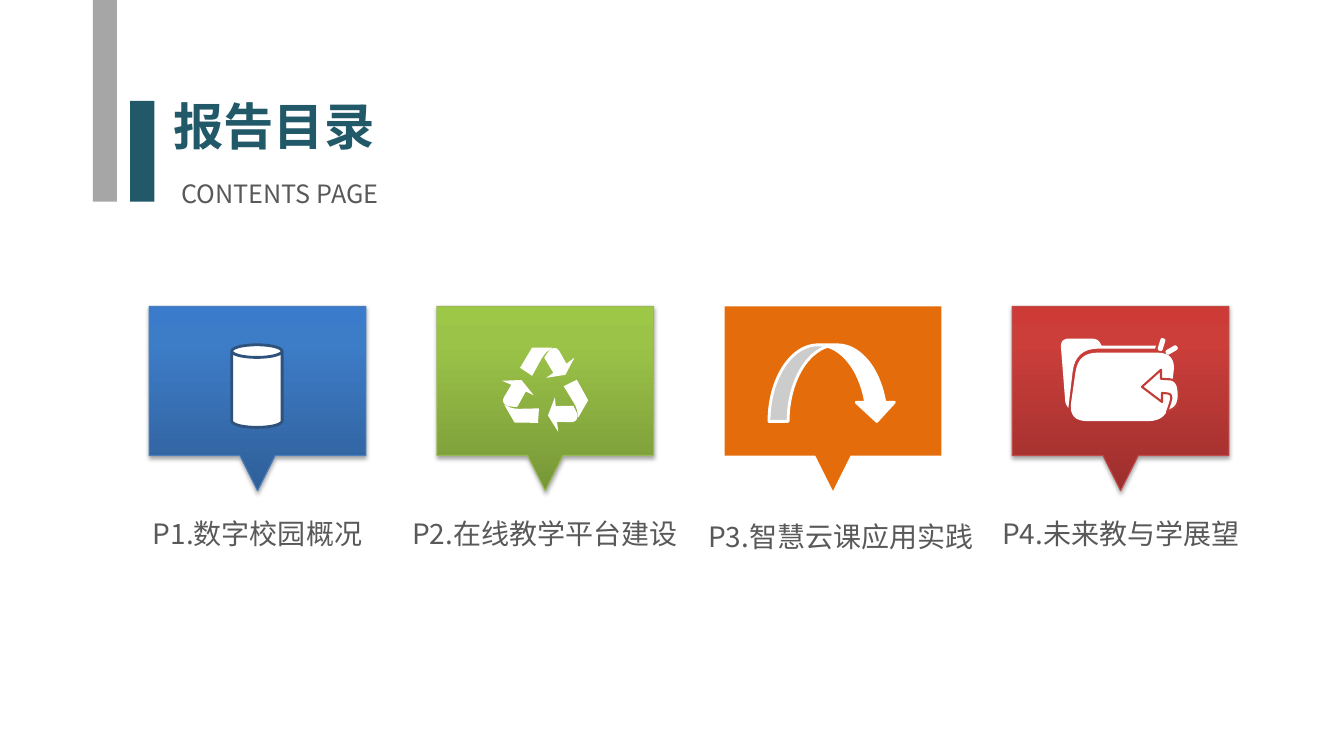
from copy import deepcopy
from dataclasses import dataclass
from math import cos, dist, radians, sin
from typing import NamedTuple, Optional

from lxml import etree
from pptx import Presentation
from pptx.dml.color import RGBColor
from pptx.enum.shapes import MSO_SHAPE
from pptx.enum.text import MSO_ANCHOR, MSO_AUTO_SIZE, PP_ALIGN
from pptx.oxml.ns import qn
from pptx.util import Cm, Pt

RECT, CAN, ARC_ARROW = MSO_SHAPE.RECTANGLE, MSO_SHAPE.CAN, MSO_SHAPE.CURVED_DOWN_ARROW
TOP, GROW, CENTER = MSO_ANCHOR.TOP, MSO_AUTO_SIZE.SHAPE_TO_FIT_TEXT, PP_ALIGN.CENTER
FONT = "Noto Sans CJK SC"
COLORS = {"gray": "A6A6A6", "teal": "215968", "text": "595959", "white": "FFFFFF",
          "orange": "E46C0A", "navy": "2F527D", "red": "C43C38"}
FINE = 10  # outlines are drawn on a grid this much finer than their units
UNIT = Cm(2.54) / 100
CURVE_STEPS = 8
CARD_LEFT, CARD_TOP, CARD_PITCH = 3.76, 7.72, 7.25


class Corner(NamedTuple):
    x: float
    y: float
    cut: float = 0  # how far from the corner its rounding starts


@dataclass
class Label:
    text: str
    box: tuple[float, float, float, float]
    size: int = 20
    color: str = "text"
    bold: bool = False
    spacing: Optional[float] = None


@dataclass
class Card:
    label: Label
    gradient: tuple[str, ...] = ()
    line: str = ""


@dataclass
class Preset:
    kind: MSO_SHAPE
    box: tuple[float, float, float, float]
    fill: str
    line: str = ""


Outline = list[Corner]
TITLE = Label("报告目录", (3.96, 2.26, 5.89, 1.8), 36, "teal", True)
SUBTITLE = Label("CONTENTS PAGE", (4.17, 4.37, 5.77, 1.02), 18)
CARDS = [
    Card(Label("P1.数字校园概况", (2.54, 12.88, 7.9, 1.12)),
         ("2F5F99", "3D7CC7", "3A7CCB"), "4B7EBC"),
    Card(Label("P2.在线教学平台建设", (10.11, 12.88, 7.24, 1.12)),
         ("779737", "9BC348", "9DC746"), "98B955"),
    Card(Label("P3.智慧云课应用实践", (16.81, 12.8, 8.76, 1.27), spacing=1.2)),
    Card(Label("P4.未来教与学展望", (24.87, 12.9, 6.76, 1.12)),
         ("9C2F2D", "CB3E3A", "CE3B37"), "BF4C48"),
]
BARS = [Preset(RECT, (2.34, 0, 0.61, 5.08), "gray"),
        Preset(RECT, (3.28, 2.54, 0.61, 2.54), "teal")]
ICONS = [Preset(CAN, (5.84, 8.69, 1.27, 2.08), "white", "navy"),
         Preset(ARC_ARROW, (19.38, 8.69, 3.2, 1.93), "white", "white")]


# Geometry
def turn(outline: Outline, angle: float, center: tuple[float, float]) -> Outline:
    """Rotate an outline clockwise about a center."""
    cx, cy = center
    c, s = cos(radians(angle)), sin(radians(angle))
    return [Corner(cx + (x - cx) * c - (y - cy) * s, cy + (x - cx) * s + (y - cy) * c, cut)
            for x, y, cut in outline]


def round_corners(outline: Outline) -> list[tuple[float, float]]:
    """Replace each rounded corner by points of a quadratic curve."""
    points = []
    for i, corner in enumerate(outline):
        here = corner[:2]
        if not corner.cut:
            points.append(here)
            continue
        ends = []
        for neighbour in (outline[i - 1], outline[(i + 1) % len(outline)]):
            share = min(0.5, corner.cut / dist(here, neighbour[:2]))
            ends.append([a + (b - a) * share for a, b in zip(here, neighbour)])
        for step in range(CURVE_STEPS + 1):
            t = step / CURVE_STEPS
            points.append(tuple((1 - t) ** 2 * a + 2 * t * (1 - t) * b + t * t * c
                                for a, b, c in zip(ends[0], here, ends[1])))
    return [(x * FINE, y * FINE) for x, y in points]


def callout(width: float = 215, height: float = 148, tail: float = 35) -> Outline:
    middle, half = width / 2, tail / 2
    return [Corner(0, 0), Corner(width, 0), Corner(width, height),
            Corner(middle + half, height), Corner(middle, height + tail),
            Corner(middle - half, height), Corner(0, height)]


def recycle_arms() -> list[Outline]:
    """One folded arm, repeated at every third of a turn."""
    band = [Corner(28, 0), Corner(16, 20), Corner(28, 28), Corner(40, 6, 8), Corner(48, 0)]
    arrow = [Corner(70, 10), Corner(61, 27), Corner(42, 30), Corner(49, 25), Corner(40, 10),
             Corner(46, 1, 6), Corner(53, 0, 5), Corner(62, 16)]
    return [turn(part, angle, (40.7, 42.2)) for angle in (0, 120, 240)
            for part in (band, arrow)]


def spark(x: float, y: float, angle: float, width: float = 5, length: float = 13) -> Outline:
    """A short stroke with round ends, leaning by the angle."""
    left, right, top, bottom = x - width / 2, x + width / 2, y - length / 2, y + length / 2
    box = [(left, top), (right, top), (right, bottom), (left, bottom)]
    return turn([Corner(*point, width / 2) for point in box], angle, (x, y))


def folder_parts() -> dict[str, Outline]:
    return {
        "left spark": spark(100.5, 6, 17),
        "right spark": spark(110.5, 11.5, 60),
        "back": [Corner(0, 0, 9), Corner(37, 0, 8), Corner(41, 7), Corner(95, 7),
                 Corner(94, 10), Corner(15, 10, 23), Corner(8, 69), Corner(5, 64, 3)],
        "front": [Corner(18, 14, 19), Corner(115, 14, 19), Corner(106, 82, 19),
                  Corner(8, 82, 19)],
        "return arrow": [Corner(81, 48), Corner(100, 31), Corner(100, 40),
                         Corner(117, 41, 14), Corner(118, 66, 12), Corner(106, 73),
                         Corner(112, 55, 9), Corner(101, 54), Corner(101, 63)],
    }


# Drawing
def rgb(value: str) -> RGBColor:
    return RGBColor.from_string(value)


def paint(s, fill: str, line: str = "", width: float = 2) -> None:
    s.shadow.inherit = False
    s.fill.solid()
    s.fill.fore_color.rgb = rgb(fill)
    if line:
        s.line.color.rgb = rgb(line)
        s.line.width = Pt(width)
    else:
        s.line.fill.background()


def add_preset(shapes, preset: Preset) -> None:
    s = shapes.add_shape(preset.kind, *map(Cm, preset.box))
    paint(s, COLORS[preset.fill], preset.line and COLORS[preset.line])


def write_label(s, label: Label) -> None:
    s.left, s.top, s.width, s.height = map(Cm, label.box)
    tf = s.text_frame
    for name, value in {"word_wrap": True, "auto_size": GROW, "vertical_anchor": TOP}.items():
        setattr(tf, name, value)
    p = tf.paragraphs[0]
    p.alignment, p.line_spacing = CENTER, label.spacing
    r = p.add_run()
    r.text = label.text
    font = {"name": FONT, "size": Pt(label.size), "bold": label.bold}
    for name, value in font.items():
        setattr(r.font, name, value)
    r.font.color.rgb = rgb(COLORS[label.color])
    r._r.rPr.find(qn("a:latin")).addnext(etree.Element(qn("a:ea"), typeface=FONT))


def add_outlines(shapes, outlines: list[Outline], left: float, top: float):
    first, *others = map(round_corners, outlines)
    builder = shapes.build_freeform(*first[0], scale=UNIT / FINE)
    builder.add_line_segments(first[1:])
    for points in others:
        builder.move_to(*points[0])
        builder.add_line_segments(points[1:])
    s = builder.convert_to_shape(Cm(left), Cm(top))
    paint(s, COLORS["white"])
    return s


def add_card(shapes, card: Card, left: float) -> None:
    s = add_outlines(shapes, [callout()], left, CARD_TOP)
    if not card.gradient:
        paint(s, COLORS["orange"])
        return
    paint(s, card.gradient[0], card.line, 0.75)
    s.fill.gradient()
    s.fill.gradient_angle = 90
    first_stop = s._element.spPr.find(".//" + qn("a:gs"))
    first_stop.addnext(deepcopy(first_stop))
    for stop, color, position in zip(s.fill.gradient_stops, card.gradient, (0, 0.8, 1)):
        stop.color.rgb, stop.position = rgb(color), position
    # soft shadow below
    effects = s._element.spPr.find(qn("a:effectLst"))
    shadow = etree.SubElement(effects, qn("a:outerShdw"), blurRad=str(Pt(3.1)),
                              dist=str(Pt(1.8)), dir="5400000", rotWithShape="0")
    black = etree.SubElement(shadow, qn("a:srgbClr"), val="000000")
    etree.SubElement(black, qn("a:alpha"), val="35000")


def add_folder(shapes, left: float, top: float) -> None:
    parts = {name: add_outlines(shapes, [outline], left, top)
             for name, outline in folder_parts().items()}
    paint(parts["return arrow"], COLORS["white"], COLORS["red"], 1.5)
    shapes.add_group_shape(list(parts.values()))


def main() -> None:
    prs = Presentation()
    prs.slide_width, prs.slide_height = Cm(33.87), Cm(19.05)
    shapes = prs.slides.add_slide(prs.slide_layouts[5]).shapes

    # Heading
    for bar in BARS:
        add_preset(shapes, bar)
    write_label(shapes.title, TITLE)
    write_label(shapes.add_textbox(0, 0, 0, 0), SUBTITLE)
    # Cards with captions
    for i, card in enumerate(CARDS):
        add_card(shapes, card, CARD_LEFT + i * CARD_PITCH)
        write_label(shapes.add_textbox(0, 0, 0, 0), card.label)
    # Icons
    add_folder(shapes, 26.72, 8.53)
    add_outlines(shapes, recycle_arms(), 12.7, 8.76)
    for icon in ICONS:
        add_preset(shapes, icon)
    prs.save("out.pptx")


if __name__ == "__main__":
    main()
